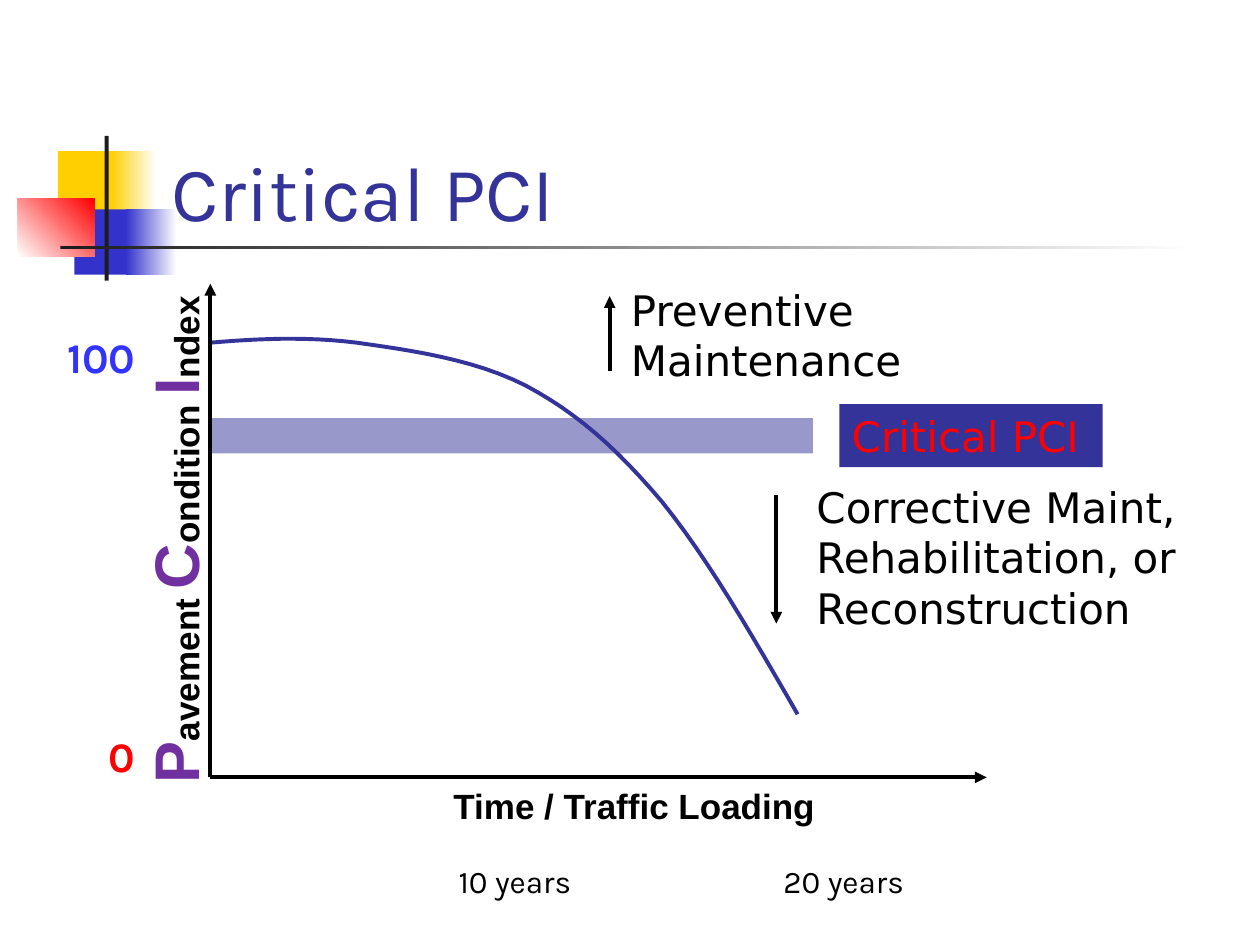
from lxml.etree import SubElement
from pptx import Presentation
from pptx.dml.color import RGBColor
from pptx.enum.shapes import MSO_CONNECTOR, MSO_SHAPE
from pptx.enum.text import MSO_ANCHOR, MSO_AUTO_SIZE, PP_ALIGN
from pptx.oxml.ns import qn
from pptx.util import Cm, Pt

COLORS = {
    "yellow": "FFCF01", "blue": "3333CC", "red": "FF0000", "white": "FFFFFF",
    "charcoal": "1C1C1C", "navy": "333399", "black": "000000",
    "purple": "7030A0", "bright blue": "3333FF",
}
ORIGIN = (4.24, 15.67)
CURVE_START = (4.24, 6.91)
CURVE_SEGMENTS = [
    [(5.18, 6.83), (6.15, 6.78), (7.19, 6.91)],
    [(8.26, 7.06), (9.55, 7.24), (10.59, 7.77)],
    [(11.61, 8.31), (12.42, 9.02), (13.34, 10.11)],
    [(14.25, 11.23), (15.16, 12.8), (16.08, 14.4)],
]


def color(name):
    return RGBColor.from_string(COLORS[name])


def add_block(slide, box, start, end=None, angle=0, opacity=None):
    block = slide.shapes.add_shape(MSO_SHAPE.RECTANGLE, *map(Cm, box))
    block.shadow.inherit = False
    block.line.fill.background()
    if end:
        block.fill.gradient()
        block.fill.gradient_angle = angle
        for stop, name in zip(block.fill.gradient_stops, (start, end)):
            stop.color.rgb = color(name)
    else:
        block.fill.solid()
        block.fill.fore_color.rgb = color(start)
    if opacity:
        srgb = block.fill._xPr.find(f".//{qn('a:srgbClr')}")
        SubElement(srgb, qn("a:alpha")).set("val", str(opacity * 1000))
    return block


def add_arrow(slide, start, end):
    arrow = slide.shapes.add_connector(
        MSO_CONNECTOR.STRAIGHT, *map(Cm, (*start, *end)))
    arrow.line.color.rgb = color("black")
    arrow.line.width = Pt(2.25)
    SubElement(arrow.line._get_or_add_ln(), qn("a:tailEnd")).set("type", "triangle")
    SubElement(arrow._element.spPr, qn("a:effectLst"))


def format_run(run, font, size, name, bold=False):
    run.font.name = font
    run.font.size = Pt(size)
    run.font.bold = bold
    run.font.color.rgb = color(name)


def write(shape, text, font, size, name, bold=False, align=PP_ALIGN.LEFT,
          anchor=MSO_ANCHOR.TOP, wrap=True):
    frame = shape.text_frame
    frame.text = text
    frame.auto_size = MSO_AUTO_SIZE.NONE
    frame.word_wrap = wrap
    frame.vertical_anchor = anchor
    frame.paragraphs[0].alignment = align
    format_run(frame.paragraphs[0].runs[0], font, size, name, bold)


def add_label(slide, box, *style, **layout):
    label = slide.shapes.add_textbox(*map(Cm, box))
    write(label, *style, **layout)


def add_title(slide):
    title = slide.shapes.title
    title.left, title.top, title.width, title.height = map(Cm, (3.2, 1.73, 21.64, 3.18))
    write(title, "Critical PCI", "Karla", 44, "navy", anchor=MSO_ANCHOR.BOTTOM)


def add_ornament(slide):
    add_block(slide, (1.17, 3.05, 1.22, 1.32), "yellow")
    add_block(slide, (2.24, 3.05, 0.91, 1.32), "yellow", "white")
    add_block(slide, (1.5, 4.22, 1.17, 1.32), "blue")
    add_block(slide, (2.54, 4.22, 1.02, 1.32), "blue", "white")
    add_block(slide, (0.36, 4.01, 1.55, 1.17), "white", "red", angle=45)
    add_block(slide, (2.11, 2.74, 0.08, 2.92), "charcoal")
    add_block(slide, (1.22, 4.95, 22.86, 0.08), "charcoal", "white")


def bezier_points(start, segments, steps=12):
    for first, second, end in segments:
        for step in range(1, steps + 1):
            t = step / steps
            u = 1 - t
            yield tuple(
                Cm(u**3 * a + 3 * u * u * t * b + 3 * u * t * t * c + t**3 * d)
                for a, b, c, d in zip(start, first, second, end))
        start = end


def add_condition_curve(slide):
    builder = slide.shapes.build_freeform(*map(Cm, CURVE_START))
    builder.add_line_segments(bezier_points(CURVE_START, CURVE_SEGMENTS), close=False)
    curve = builder.convert_to_shape()
    curve.shadow.inherit = False
    curve.fill.background()
    curve.line.color.rgb = color("navy")
    curve.line.width = Pt(2.25)


def add_index_label(slide):
    label = slide.shapes.add_textbox(*map(Cm, (-1.68, 9.93, 10.41, 1.8)))
    label.rotation = 270
    label.text_frame.word_wrap = False
    paragraph = label.text_frame.paragraphs[0]
    for word in ("Pavement ", "Condition ", "Index"):
        for part, size, name in ((word[0], 36, "purple"), (word[1:], 20, "black")):
            run = paragraph.add_run()
            run.text = part
            format_run(run, "Arial", size, name, True)


def main():
    deck = Presentation()
    deck.slide_width, deck.slide_height = Cm(25.4), Cm(19.05)
    slide = deck.slides.add_slide(deck.slide_layouts[5])
    add_ornament(slide)
    add_title(slide)

    add_block(slide, (4.27, 8.43, 12.12, 0.71), "navy", opacity=50)
    add_condition_curve(slide)
    add_arrow(slide, ORIGIN, (ORIGIN[0], 5.72))
    add_arrow(slide, ORIGIN, (19.89, ORIGIN[1]))
    add_arrow(slide, (12.29, 7.47), (12.29, 5.97))
    add_arrow(slide, (15.65, 9.98), (15.65, 12.57))

    add_label(slide, (12.47, 5.61, 6.05, 2.29), "Preventive Maintenance",
              "DejaVu Sans", 24, "black")
    add_label(slide, (16.21, 9.58, 8.13, 3.3),
              "Corrective Maint, Rehabilitation, or Reconstruction",
              "DejaVu Sans", 24, "black")
    critical = add_block(slide, (16.92, 8.15, 5.31, 1.27), "navy")
    write(critical, "Critical PCI", "DejaVu Sans", 24, "red")

    add_index_label(slide)
    add_label(slide, (8.89, 15.7, 8.13, 1.12), "Time / Traffic Loading",
              "Arial", 20, "black", True, wrap=False)
    add_label(slide, (0.64, 6.55, 2.34, 1.27), "100", "Karla", 24,
              "bright blue", True, PP_ALIGN.RIGHT)
    add_label(slide, (1.07, 14.61, 1.9, 1.27), "0", "Karla", 24,
              "red", True, PP_ALIGN.RIGHT)
    for left, years in ((8.69, "10 years"), (15.32, "20 years")):
        add_label(slide, (left, 17.25, 3.38, 1.02), years, "Karla", 18,
                  "black", align=PP_ALIGN.CENTER)
    deck.save("out.pptx")


if __name__ == "__main__":
    main()
